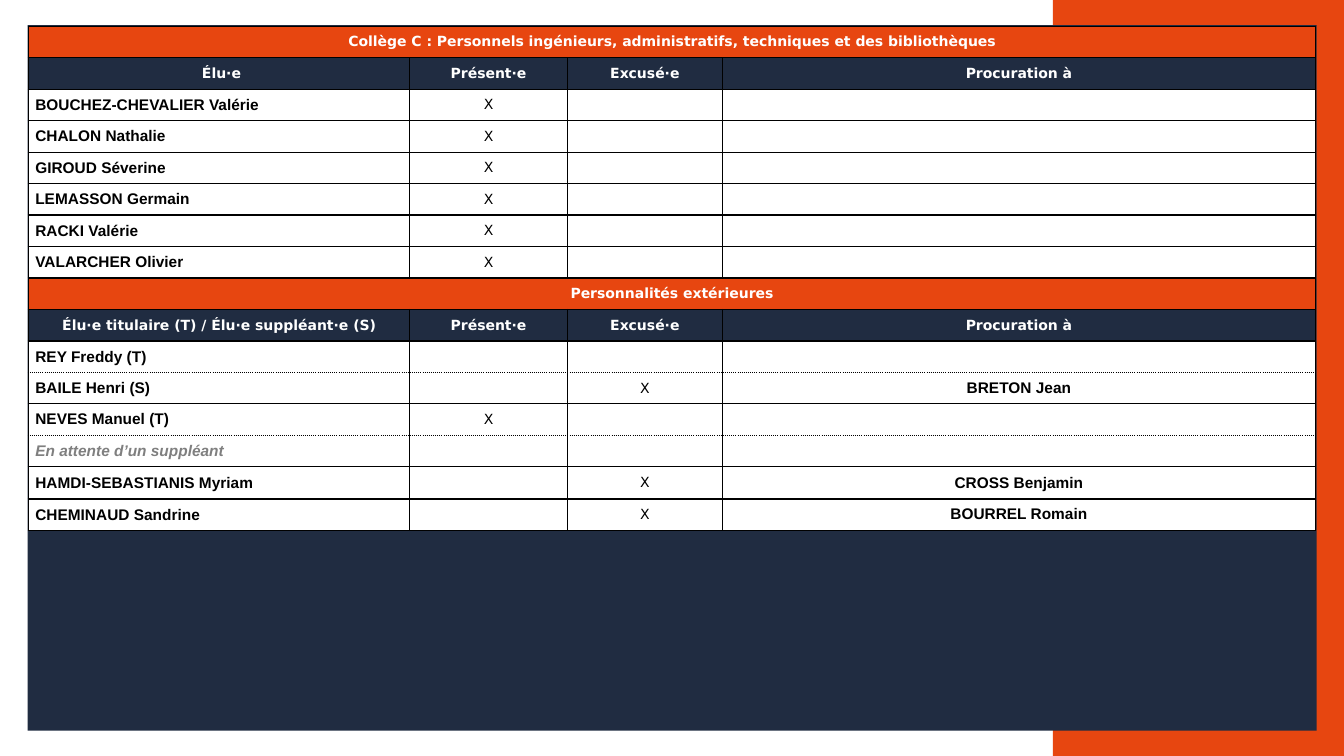
"""Builds the attendance slide for college C and the external members."""
from lxml.etree import SubElement
from pptx import Presentation
from pptx.dml.color import RGBColor
from pptx.enum.shapes import MSO_SHAPE
from pptx.enum.text import MSO_ANCHOR, PP_ALIGN
from pptx.oxml.ns import qn
from pptx.util import Pt

ORANGE = RGBColor(0xE7, 0x46, 0x10)
NAVY = RGBColor(0x20, 0x2C, 0x41)
WHITE = RGBColor(0xFF, 0xFF, 0xFF)
BLACK = RGBColor(0, 0, 0)
GREY = RGBColor(0x7F, 0x7F, 0x7F)

HEADS = ("Présent·e", "Excusé·e", "Procuration à")
ROWS = [
    ("title", "Collège C : Personnels ingénieurs, administratifs, techniques et des bibliothèques"),
    ("head", " Élu·e", *HEADS),
    ("name", "BOUCHEZ-CHEVALIER Valérie", "X", "", ""),
    ("name", "CHALON Nathalie", "X", "", ""),
    ("name", "GIROUD Séverine", "X", "", ""),
    ("name", "LEMASSON Germain", "X", "", ""),
    ("name", "RACKI Valérie", "X", "", ""),
    ("name", "VALARCHER Olivier", "X", "", ""),
    ("title", "Personnalités extérieures"),
    ("head", "Élu·e titulaire (T) / Élu·e suppléant·e (S)", *HEADS),
    ("name", "REY Freddy (T)", "", "", ""),
    ("name", "BAILE Henri (S)", "", "X", "BRETON Jean"),
    ("name", "NEVES Manuel (T)", "X", "", ""),
    ("wait", "En attente d’un suppléant", "", "", ""),
    ("name", "HAMDI-SEBASTIANIS Myriam", "", "X", "CROSS Benjamin"),
    ("name", "CHEMINAUD Sandrine", "", "X", "BOURREL Romain"),
]
DOTTED = {10, 12}
FILLS = {"title": ORANGE, "head": NAVY}
WIDTHS = (272.5, 112.5, 110.75, 423.75)
HEIGHT = 22.5
TALL = {14: 23}


def add_block(slide, left, top, width, height, fill):
    block = slide.shapes.add_shape(
        MSO_SHAPE.RECTANGLE, Pt(left), Pt(top), Pt(width), Pt(height))
    block.shadow.inherit = False
    block.fill.solid()
    block.fill.fore_color.rgb = fill
    block.line.fill.background()


def add_edges(cell, row):
    props = cell._tc.get_or_add_tcPr()
    dotted = {"T": row - 1 in DOTTED, "B": row in DOTTED}
    for side in "LRTB":
        line = SubElement(props, qn("a:ln" + side), w=str(Pt(1)))
        paint = SubElement(line, qn("a:solidFill"))
        SubElement(paint, qn("a:srgbClr"), val=str(BLACK))
        dash = "dot" if dotted.get(side) else "solid"
        SubElement(line, qn("a:prstDash"), val=dash)


def write_cell(cell, kind, text, col):
    cell.fill.solid()
    cell.fill.fore_color.rgb = FILLS.get(kind, WHITE)
    cell.vertical_anchor = MSO_ANCHOR.MIDDLE
    cell.margin_left = cell.margin_right = Pt(5)
    cell.margin_top = cell.margin_bottom = 0
    cell.text = text
    para = cell.text_frame.paragraphs[0]
    banner = kind in FILLS
    person = not banner and col in (0, 3)
    if banner or col:
        para.alignment = PP_ALIGN.CENTER
        para.line_spacing = Pt(12)
    font = para.font
    font.name = "Arial" if person else "DejaVu Sans"
    font.size = Pt(11 if person else 10)
    font.bold = banner or person
    font.italic = kind == "wait"
    font.color.rgb = WHITE if banner else GREY if kind == "wait" else BLACK


def add_roll(slide):
    frame = slide.shapes.add_table(
        len(ROWS), len(WIDTHS), Pt(20.25), Pt(18.75),
        Pt(sum(WIDTHS)), Pt(HEIGHT * len(ROWS)))
    table = frame.table
    table.first_row = table.horz_banding = False
    for col, width in enumerate(WIDTHS):
        table.columns[col].width = Pt(width)
    for row, (kind, *texts) in enumerate(ROWS):
        table.rows[row].height = Pt(TALL.get(row, HEIGHT))
        for col in range(len(WIDTHS)):
            add_edges(table.cell(row, col), row)
        if kind == "title":
            table.cell(row, 0).merge(table.cell(row, len(WIDTHS) - 1))
        for col, text in enumerate(texts):
            write_cell(table.cell(row, col), kind, text, col)


def main():
    deck = Presentation()
    deck.slide_width, deck.slide_height = Pt(960), Pt(540)
    slide = deck.slides.add_slide(deck.slide_layouts[6])
    add_block(slide, 752, 0, 208, 540, ORANGE)
    add_block(slide, 19.75, 18, 920.75, 504, NAVY)
    add_roll(slide)
    deck.save("out.pptx")


if __name__ == "__main__":
    main()
